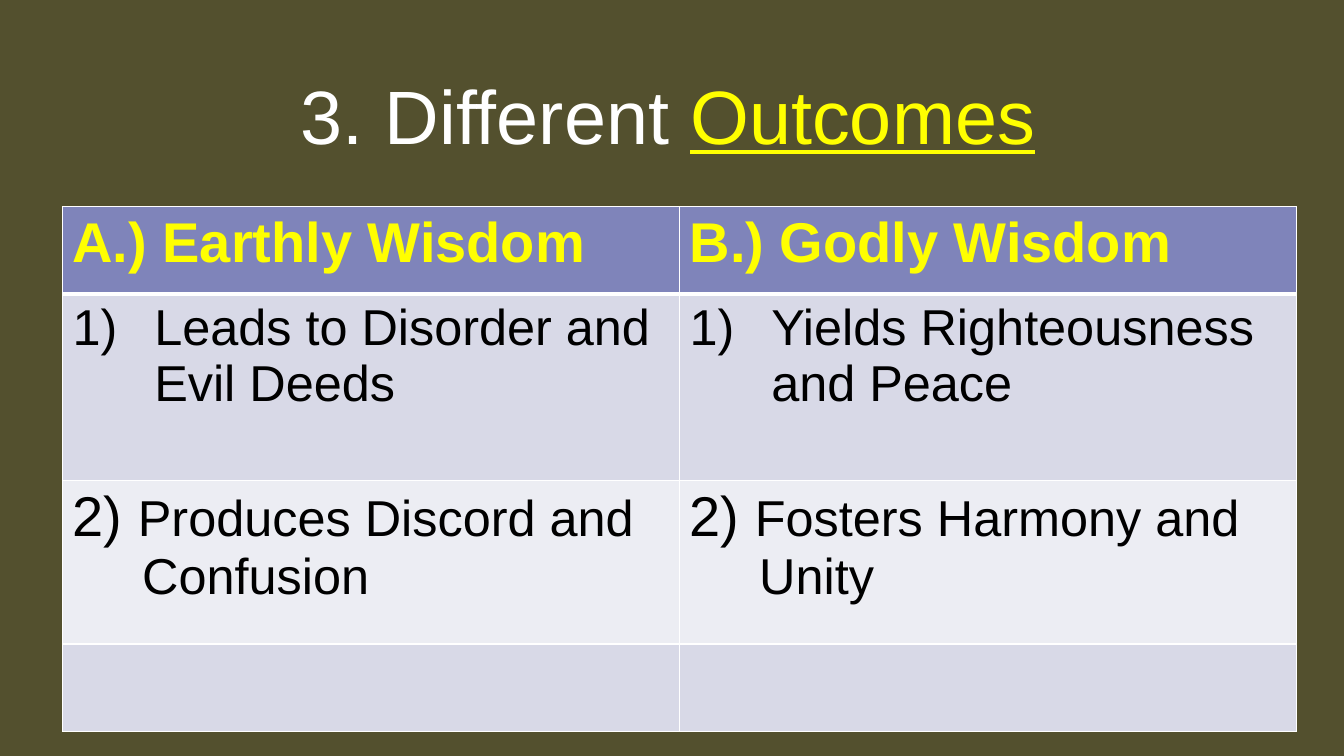
from lxml import etree
from pptx import Presentation
from pptx.dml.color import RGBColor
from pptx.enum.text import MSO_ANCHOR, MSO_AUTO_SIZE, PP_ALIGN
from pptx.oxml.ns import qn
from pptx.util import Inches, Pt

TOP = MSO_ANCHOR.TOP
NO_FIT = MSO_AUTO_SIZE.NONE
CENTER = PP_ALIGN.CENTER
TITLE_ONLY = 5

OLIVE, WHITE, YELLOW, BLACK = "53502E", "FFFFFF", "FFFF00", "000000"
HEADER_FILL, BAND_FILLS = "7F84BA", ("D8D9E7", "ECEDF3")
HEADERS = ("A.) Earthly Wisdom", "B.) Godly Wisdom")
FIRST_OUTCOMES = ("Leads to Disorder and Evil Deeds", "Yields Righteousness and Peace")
SECOND_OUTCOMES = (("Produces Discord and", "Confusion"), ("Fosters Harmony and", "Unity"))
ROW_HEIGHTS = (0.87, 1.85, 1.62, 0.87)


def color(value):
    """Turn a hex string into a colour."""
    return RGBColor.from_string(value)


class SlideBuilder:
    """Hold the style and the current slide."""

    font_name = "Arial"

    def __init__(self, deck):
        """Add a slide with a plain background."""
        self.page = deck.slides.add_slide(deck.slide_layouts[TITLE_ONLY])
        background = self.page.background.fill
        background.solid()
        background.fore_color.rgb = color(OLIVE)

    def style(self, font, size, ink, bold=False):
        """Format the font of a paragraph or span."""
        font.name, font.size, font.bold = self.font_name, Pt(size), bold
        font.color.rgb = color(ink)

    def title(self, plain, marked):
        """Fill the title, underlining its second part."""
        box = self.page.shapes.title
        box.left, box.top = Inches(0.38), Inches(0.68)
        box.width, box.height = Inches(12.49), Inches(1.62)
        frame = box.text_frame
        frame.auto_size, frame.vertical_anchor, frame.word_wrap = NO_FIT, TOP, True
        frame.margin_left = frame.margin_right = frame.margin_top = frame.margin_bottom = 0
        para = frame.paragraphs[0]
        para.alignment = CENTER
        for text, ink in ((plain, WHITE), (marked, YELLOW)):
            span = para.add_run()
            span.text = text
            self.style(span.font, 54, ink)
        span.font.underline = True

    def table(self, columns, heights):
        """Add a table with filled, bordered cells."""
        frame = self.page.shapes.add_table(
            len(heights), columns, Inches(0.62), Inches(2.05),
            Inches(12.24), Inches(sum(heights)))
        grid = frame.table
        grid.horz_banding = False
        for index, height in enumerate(heights):
            grid.rows[index].height = Inches(height)
            fill = BAND_FILLS[(index - 1) % 2] if index else HEADER_FILL
            for cell in grid.rows[index].cells:
                self.border(cell, {"L": 1, "R": 1, "T": 3 if index == 1 else 1,
                                   "B": 3 if index == 0 else 1})
                cell.fill.solid()
                cell.fill.fore_color.rgb = color(fill)
        return grid

    def border(self, cell, widths):
        """Draw white borders of the given point widths."""
        properties = cell._tc.get_or_add_tcPr()
        for side, width in widths.items():
            line = etree.SubElement(properties, qn(f"a:ln{side}"), w=str(Pt(width)))
            solid = etree.SubElement(line, qn("a:solidFill"))
            etree.SubElement(solid, qn("a:srgbClr"), val=WHITE)

    def header(self, cell, text):
        """Write a column heading."""
        para = cell.text_frame.paragraphs[0]
        para.text = text
        self.style(para.font, 40, YELLOW, bold=True)

    def numbered(self, cell, text):
        """Write an automatically numbered item."""
        para = cell.text_frame.paragraphs[0]
        para.text = text
        self.style(para.font, 36, BLACK)
        properties = self.indent(para, 0.81, -0.81)
        etree.SubElement(properties, qn("a:buFont"), typeface=self.font_name)
        etree.SubElement(properties, qn("a:buAutoNum"), type="arabicParenR")
        properties.append(properties.find(qn("a:defRPr")))

    def large_number(self, cell, number, lines):
        """Write an item with a larger number and an indented second line."""
        first = cell.text_frame.paragraphs[0]
        for text, size in ((number, 40), (lines[0], 36)):
            span = first.add_run()
            span.text = text
            self.style(span.font, size, BLACK)
        second = cell.text_frame.add_paragraph()
        second.text = lines[1]
        self.style(second.font, 36, BLACK)
        self.indent(second, 0.69, 0)

    def indent(self, para, left, first):
        """Set the left margin and first-line indent in inches."""
        properties = para._p.get_or_add_pPr()
        properties.set("marL", str(Inches(left)))
        properties.set("indent", str(Inches(first)))
        return properties


def main():
    """Build and save the slide."""
    deck = Presentation()
    deck.slide_width, deck.slide_height = Inches(13.33), Inches(7.5)
    builder = SlideBuilder(deck)
    builder.title("3. Different ", "Outcomes")
    grid = builder.table(len(HEADERS), ROW_HEIGHTS)
    for column, heading in enumerate(HEADERS):
        builder.header(grid.cell(0, column), heading)
        builder.numbered(grid.cell(1, column), FIRST_OUTCOMES[column])
        builder.large_number(grid.cell(2, column), "2) ", SECOND_OUTCOMES[column])
    deck.save("out.pptx")


if __name__ == "__main__":
    main()
